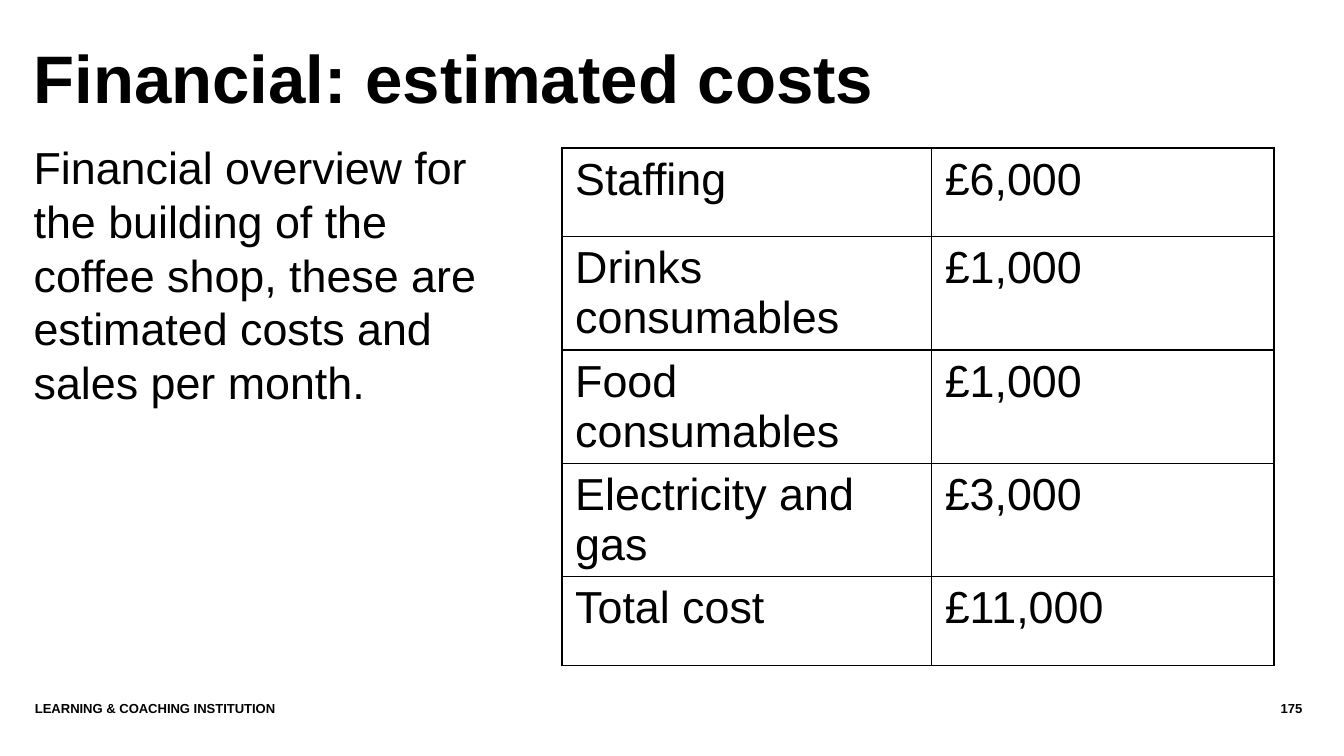
from lxml.etree import SubElement
from pptx import Presentation
from pptx.dml.color import RGBColor
from pptx.enum.text import MSO_ANCHOR, MSO_AUTO_SIZE, PP_ALIGN
from pptx.oxml.ns import qn
from pptx.util import Inches, Pt

BLACK = RGBColor(0x00, 0x00, 0x00)
FONT = "Arial"
COSTS = [
    ("Staffing", "£6,000"),
    ("Drinks consumables", "£1,000"),
    ("Food consumables", "£1,000"),
    ("Electricity and gas", "£3,000"),
    ("Total cost", "£11,000"),
]
COLUMN_WIDTHS = (2.75, 2.55)
ROW_HEIGHT = 0.66


def write(tf, text, size, bold=False, align=PP_ALIGN.LEFT):
    p = tf.paragraphs[0]
    p.alignment = align
    r = p.add_run()
    r.text = text
    r.font.name = FONT
    r.font.size = Pt(size)
    r.font.bold = bold
    r.font.color.rgb = BLACK


def fill_text_shape(sp, box, text, size, **style):
    """Place a text shape and give it top-anchored text without margins."""
    sp.left, sp.top, sp.width, sp.height = map(Inches, box)
    tf = sp.text_frame
    tf.margin_left = tf.margin_top = tf.margin_right = tf.margin_bottom = 0
    tf.word_wrap = True
    tf.auto_size = MSO_AUTO_SIZE.NONE
    tf.vertical_anchor = MSO_ANCHOR.TOP
    write(tf, text, size, **style)


def add_text(s, box, text, size, **style):
    sp = s.shapes.add_textbox(*map(Inches, box))
    fill_text_shape(sp, box, text, size, **style)


def set_borders(cell, color, width):
    # Borders must precede the fill in the cell properties.
    tc_pr = cell._tc.get_or_add_tcPr()
    for i, side in enumerate(("a:lnL", "a:lnR", "a:lnT", "a:lnB")):
        ln = SubElement(tc_pr, qn(side), w=str(Pt(width)))
        fill = SubElement(ln, qn("a:solidFill"))
        SubElement(fill, qn("a:srgbClr"), val=str(color))
        tc_pr.insert(i, ln)


def add_cost_table(s, left, top):
    frame = s.shapes.add_table(
        len(COSTS), len(COLUMN_WIDTHS), Inches(left), Inches(top),
        Inches(sum(COLUMN_WIDTHS)), Inches(ROW_HEIGHT * len(COSTS)))
    table = frame.table
    table.first_row = table.horz_banding = False
    for column, width in zip(table.columns, COLUMN_WIDTHS):
        column.width = Inches(width)
    for row, values in zip(table.rows, COSTS):
        row.height = Inches(ROW_HEIGHT)
        for cell, value in zip(row.cells, values):
            cell.fill.background()
            set_borders(cell, BLACK, 1)
            write(cell.text_frame, value, 24)


def main():
    prs = Presentation()
    prs.slide_width, prs.slide_height = Inches(10), Inches(10 * 9 / 16)
    s = prs.slides.add_slide(prs.slide_layouts[5])

    fill_text_shape(s.shapes.title, (0.25, 0.27, 9.23, 0.76),
                    "Financial: estimated costs", 36, bold=True)
    add_text(s, (0.25, 1.04, 3.49, 3.67),
             "Financial overview for the building of the coffee shop, "
             "these are estimated costs and sales per month.", 24)
    add_text(s, (0.26, 5.21, 8.41, 0.3),
             "LEARNING & COACHING INSTITUTION", 7, bold=True)
    add_text(s, (8.7, 5.21, 0.99, 0.3), "175", 7, bold=True,
             align=PP_ALIGN.RIGHT)
    add_cost_table(s, 4.18, 1.1)

    prs.save("out.pptx")


if __name__ == "__main__":
    main()
